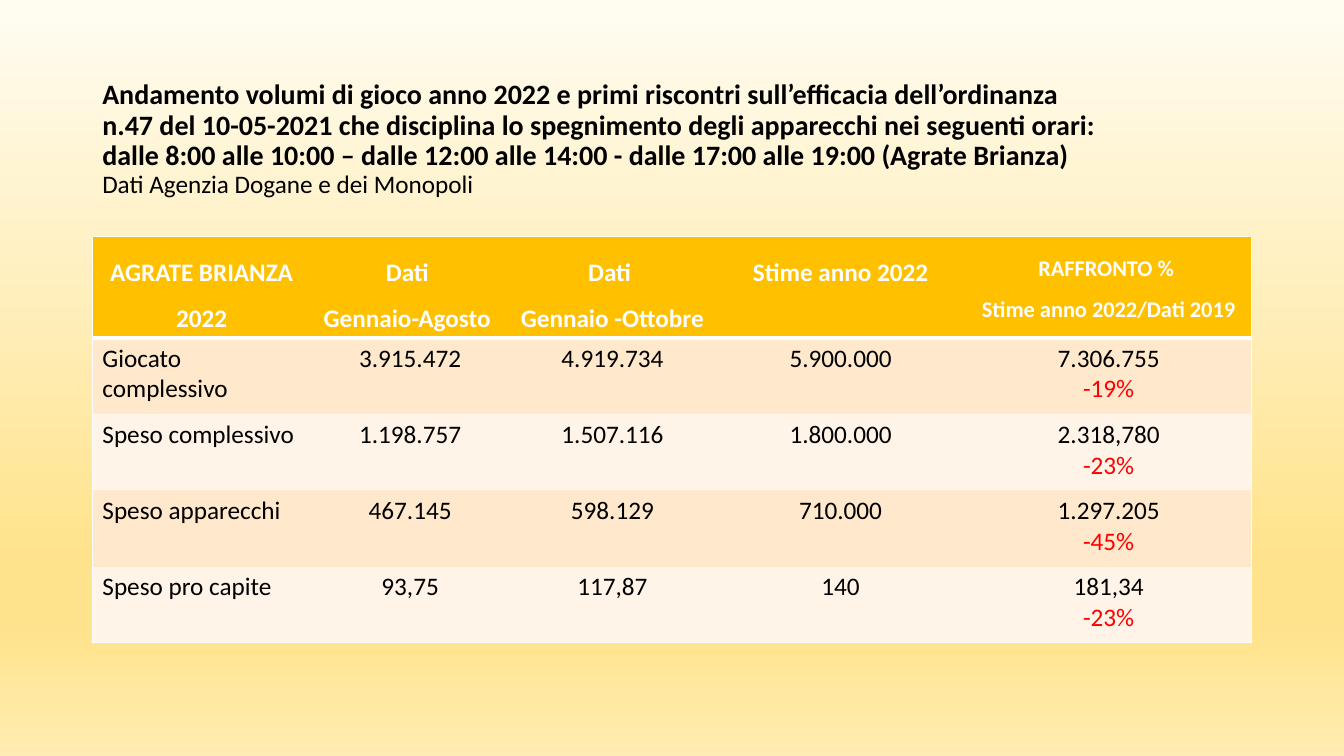
"""Build the slide on the 2022 gambling volumes in Agrate Brianza."""
from copy import deepcopy
from lxml.etree import SubElement
from pptx import Presentation
from pptx.dml.color import RGBColor
from pptx.enum.text import MSO_ANCHOR, PP_ALIGN
from pptx.oxml.ns import qn
from pptx.util import Pt

BLACK = RGBColor(0x00, 0x00, 0x00)
WHITE = RGBColor(0xFF, 0xFF, 0xFF)
RED = RGBColor(0xFF, 0x00, 0x00)
GOLD = RGBColor(0xFF, 0xC0, 0x00)
PEACH = RGBColor(0xFF, 0xE8, 0xCB)
CREAM = RGBColor(0xFF, 0xF4, 0xE7)
STOPS = [
    (0, RGBColor(0xFF, 0xFC, 0xF2)),
    (0.74, RGBColor(0xFF, 0xE3, 0x8C)),
    (0.83, RGBColor(0xFF, 0xE3, 0x8C)),
    (1, RGBColor(0xFF, 0xEC, 0xB2)),
]
PLAIN = "{2D5ABB26-0587-4C30-8999-92F81FD0307C}"

TITLE = [
    "Andamento volumi di gioco anno 2022 e primi riscontri sull’efficacia dell’ordinanza ",
    "n.47 del 10-05-2021 che disciplina lo spegnimento degli apparecchi nei seguenti orari: ",
    "dalle 8:00 alle 10:00 – dalle 12:00 alle 14:00 - dalle 17:00 alle 19:00 (Agrate Brianza)",
    "Dati Agenzia Dogane e dei Monopoli",
]
ROWS = [
    ["AGRATE BRIANZA 2022", "Dati \nGennaio-Agosto ", "Dati \nGennaio -Ottobre",
     "Stime anno 2022", "RAFFRONTO % \nStime anno 2022/Dati 2019"],
    ["Giocato complessivo", "3.915.472", "4.919.734", "5.900.000", "7.306.755\n-19%"],
    ["Speso complessivo", "1.198.757", "1.507.116", "1.800.000", "2.318,780\n-23%"],
    ["Speso apparecchi", "467.145", "598.129", "710.000", "1.297.205\n-45%"],
    ["Speso pro capite", "93,75", "117,87", "140", "181,34\n-23%"],
]
WIDTHS = [156, 142, 147, 179, 204]
HEIGHTS = [72.5, 54.4, 54.4, 54.4, 54.4]


def style(run, size, color, bold):
    font = run.font
    font.name = "Calibri"
    font.size = Pt(size)
    font.color.rgb = color
    font.bold = bold


def edge(cell, sides):
    props = cell._tc.get_or_add_tcPr()
    for spot, (side, width) in enumerate(sides):
        line = SubElement(props, qn(f"a:ln{side}"), w=str(Pt(width)))
        fill = SubElement(line, qn("a:solidFill"))
        SubElement(fill, qn("a:srgbClr"), val=str(WHITE))
        props.insert(spot, line)


deck = Presentation()
deck.slide_width, deck.slide_height = Pt(960), Pt(540)
slide = deck.slides.add_slide(deck.slide_layouts[6])

back = slide.background.fill
back.gradient()
back.gradient_angle = 270
stops = slide._element.find(".//" + qn("a:gsLst"))
for _ in range(len(STOPS) - len(stops)):
    stops.append(deepcopy(stops[0]))
for stop, (place, color) in zip(back.gradient_stops, STOPS):
    stop.position = place
    stop.color.rgb = color

frame = slide.shapes.add_textbox(Pt(66), Pt(41), Pt(828), Pt(117.5)).text_frame
frame.word_wrap = True
frame.vertical_anchor = MSO_ANCHOR.MIDDLE
frame.text = "\v".join(TITLE)
head = frame.paragraphs[0]
head.line_spacing = 0.9
for run in head.runs:
    style(run, 20, BLACK, True)
style(head.runs[-1], 18, BLACK, False)

holder = slide.shapes.add_table(
    len(ROWS), len(WIDTHS), Pt(66), Pt(169), Pt(sum(WIDTHS)), Pt(sum(HEIGHTS)))
table = holder.table
table.horz_banding = False
table._tbl.tblPr.find(qn("a:tableStyleId")).text = PLAIN
for column, width in zip(table.columns, WIDTHS):
    column.width = Pt(width)
for row, height in zip(table.rows, HEIGHTS):
    row.height = Pt(height)

last_row, last_col = len(ROWS) - 1, len(WIDTHS) - 1
for r, texts in enumerate(ROWS):
    for c, text in enumerate(texts):
        cell = table.cell(r, c)
        cell.text_frame.text = text
        cell.fill.solid()
        cell.fill.fore_color.rgb = GOLD if r == 0 else PEACH if r % 2 else CREAM
        for n, para in enumerate(cell.text_frame.paragraphs):
            para.alignment = PP_ALIGN.CENTER if r == 0 or c else PP_ALIGN.LEFT
            if r == 0:
                para.line_spacing = 1.5
                style(para.runs[0], 16 if c == last_col else 18, WHITE, True)
            else:
                style(para.runs[0], 18, RED if n else BLACK, False)
        sides = []
        if c == 0:
            sides.append(("L", 1))
        if c == last_col:
            sides.append(("R", 1))
        if r == 0:
            sides += [("T", 1), ("B", 3)]
        if r == last_row:
            sides.append(("B", 1))
        edge(cell, sides)

deck.save("out.pptx")
